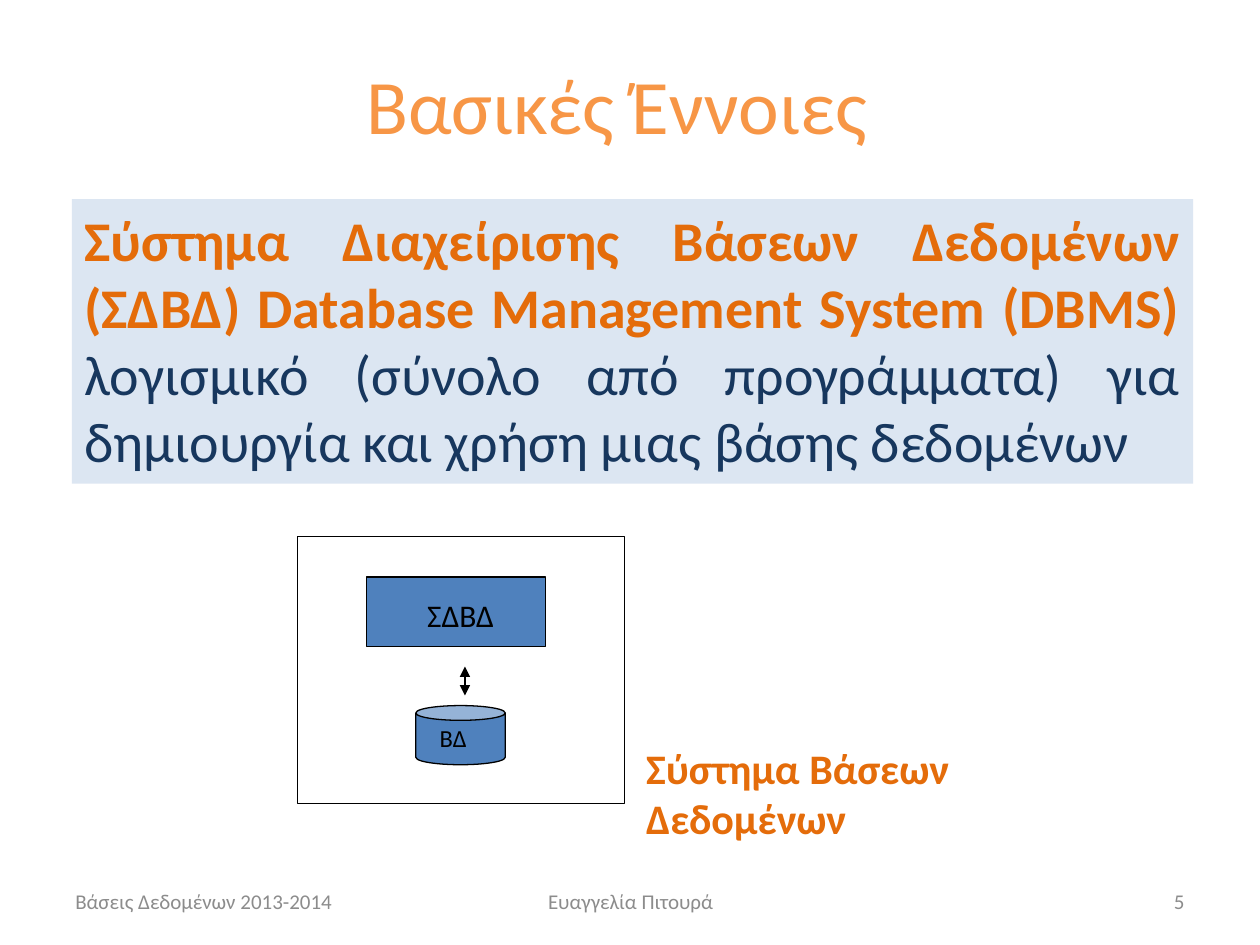
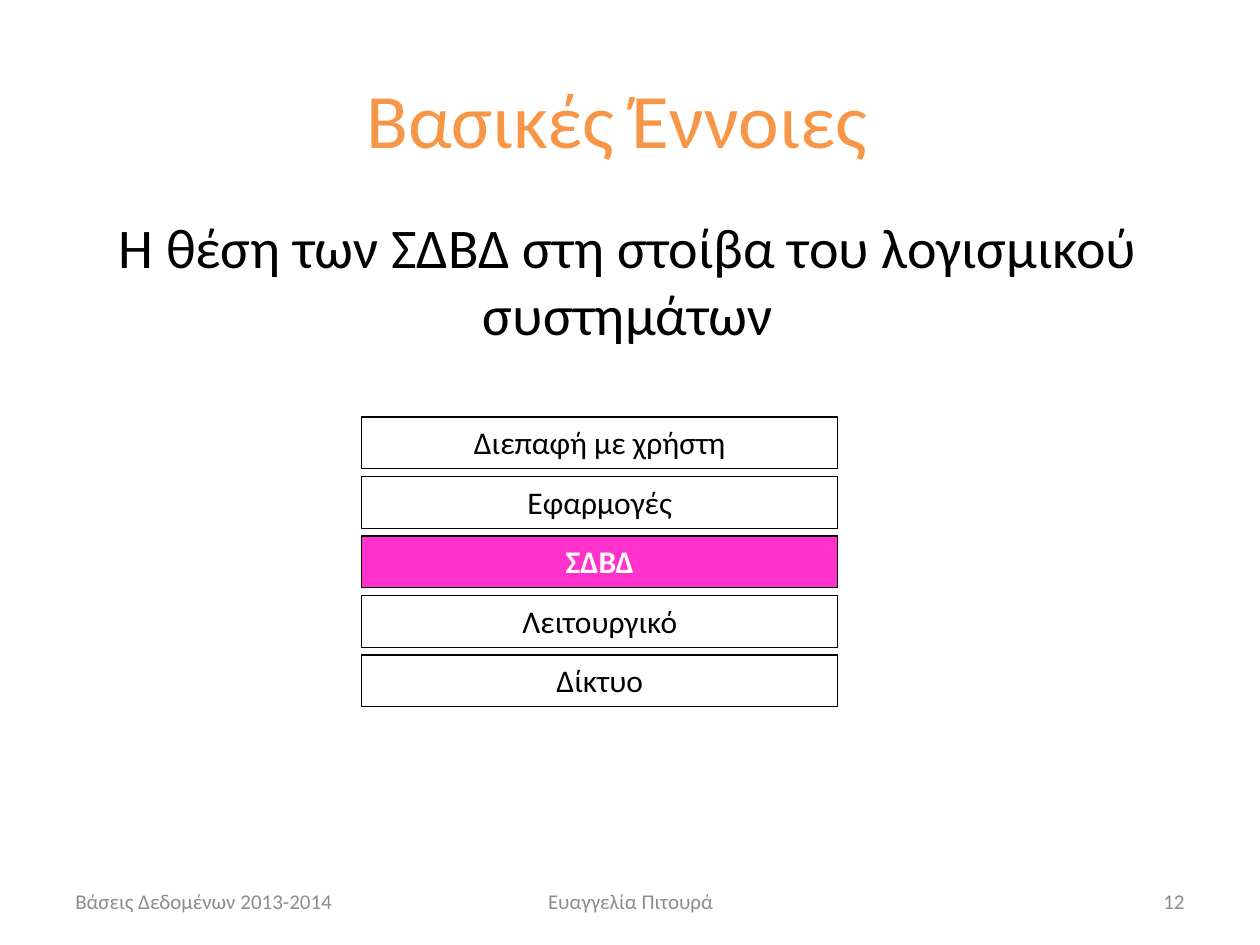
from lxml import etree
from pptx import Presentation
from pptx.dml.color import RGBColor
from pptx.enum import shapes, text
from pptx.oxml.ns import qn
from pptx.util import Inches, Pt

COLORS = {"title": "F79646", "accent": "E46C0A", "navy": "17375E", "pale": "DCE6F2",
          "blue": "4F81BD", "pink": "FF33CC", "grey": "8C8C8C", "black": "000000",
          "white": "FFFFFF"}
FONT = "Calibri"
LEFT, CENTER, RIGHT, JUSTIFY = (text.PP_ALIGN.LEFT, text.PP_ALIGN.CENTER,
                                text.PP_ALIGN.RIGHT, text.PP_ALIGN.JUSTIFY)
TOP, MIDDLE = text.MSO_ANCHOR.TOP, text.MSO_ANCHOR.MIDDLE
RECT, CAN = shapes.MSO_SHAPE.RECTANGLE, shapes.MSO_SHAPE.CAN


def rgb(name):
    """Return the named colour."""
    return RGBColor.from_string(COLORS[name])


def write(sp, runs, size, align=LEFT, anchor=TOP):
    """Fill a shape with one paragraph of (text, colour, bold) runs."""
    tf = sp.text_frame
    for name, value in {"word_wrap": True, "vertical_anchor": anchor}.items():
        setattr(tf, name, value)
    p = tf.paragraphs[0]
    p.alignment = align
    for words, color, bold in runs:
        r = p.add_run()
        r.text = words
        for name, value in {"name": FONT, "size": Pt(size), "bold": bold}.items():
            setattr(r.font, name, value)
        r.font.color.rgb = rgb(color)


def label(s, box, words, size, color="black", bold=False, align=LEFT, anchor=TOP):
    """Add a text box with a single run."""
    sp = s.shapes.add_textbox(*map(Inches, box))
    write(sp, [(words, color, bold)], size, align, anchor)
    return sp


def block(s, box, kind=RECT, fill=None, line="black"):
    """Add a flat preset shape with optional fill and outline."""
    sp = s.shapes.add_shape(kind, *map(Inches, box))
    sp.shadow.inherit = False
    if fill:
        sp.fill.solid()
        sp.fill.fore_color.rgb = rgb(fill)
    else:
        sp.fill.background()
    if line:
        sp.line.color.rgb = rgb(line)
        sp.line.width = Pt(0.75)
    else:
        sp.line.fill.background()
    return sp


def double_arrow(s, x, top, bottom):
    """Draw a vertical line with an arrowhead at each end."""
    sp = s.shapes.add_connector(shapes.MSO_CONNECTOR.STRAIGHT,
                                *map(Inches, (x, top, x, bottom)))
    sp.line.color.rgb = rgb("black")
    sp.line.width = Pt(0.75)
    ln = sp.line._get_or_add_ln()
    for end in ("a:headEnd", "a:tailEnd"):
        etree.SubElement(ln, qn(end), type="triangle")
    etree.SubElement(sp._element.spPr, qn("a:effectLst"))


def base_slide(prs, number, title_top):
    """Add a blank slide with the common title and footer."""
    s = prs.slides.add_slide(prs.slide_layouts[6])
    for left, width, words, align in ((0.5, 2.33, "Βάσεις Δεδομένων 2013-2014", LEFT),
                                      (3.42, 3.17, "Ευαγγελία Πιτουρά", CENTER),
                                      (7.17, 2.33, str(number), RIGHT)):
        label(s, (left, 6.95, width, 0.4), words, 12, "grey", align=align, anchor=MIDDLE)
    label(s, (0.4, title_top, 9, 1.25), "Βασικές Έννοιες", 44, "title",
          align=CENTER, anchor=MIDDLE)
    return s


def definition(s, box):
    """Draw the shaded definition panel."""
    write(block(s, box, fill="pale", line=None),
          [("Σύστημα Διαχείρισης Βάσεων Δεδομένων (ΣΔΒΔ) Database Management System (DBMS) ",
            "accent", True),
           ("λογισμικό (σύνολο από προγράμματα) για δημιουργία και χρήση μιας βάσης δεδομένων",
            "navy", False)], 32, JUSTIFY)


def database_system(s, box):
    """Draw the framed DBMS and database with the system caption."""
    x, y, w, h = box
    block(s, (x + 0.94, y + 1.34, 0.71, 0.47), CAN, "blue")
    block(s, (x + 0.55, y + 0.32, 1.42, 0.55), fill="blue")
    block(s, box)
    database = label(s, (x + 0.94, y + 1.43, 0.63, 0.34), "ΒΔ", 14)
    database.text_frame.margin_left = Inches(0.19)
    label(s, (x + 0.74, y + 0.42, 1.11, 0.4), "ΣΔΒΔ", 18, align=CENTER)
    label(s, (x + w + 0.07, y + h - 0.54, 3.23, 0.91), "Σύστημα Βάσεων Δεδομένων",
          24, "accent", True)
    double_arrow(s, x + 1.33, y + 1.03, y + 1.26)


def software_stack(s, box, layers, highlight, gap=0.06):
    """Draw the software layers at equal steps, one highlighted."""
    x, y, w, h = box
    row = (h - gap * (len(layers) - 1)) / len(layers)
    for i, layer in enumerate(layers):
        chosen = layer == highlight
        sp = block(s, (x, y + i * (row + gap), w, row), fill="pink" if chosen else None)
        write(sp, [(layer, "white" if chosen else "black", chosen)], 18, CENTER)


def main():
    """Build and save both slides."""
    prs = Presentation()
    prs.slide_width, prs.slide_height = Inches(10), Inches(7.5)

    s = base_slide(prs, 5, 0.2)
    definition(s, (0.57, 1.58, 8.9, 2.26))
    database_system(s, (2.36, 4.26, 2.6, 2.12))

    s = base_slide(prs, 12, 0.31)
    label(s, (0.4, 1.97, 9.17, 0.5), "Η θέση των ΣΔΒΔ στη στοίβα του λογισμικού συστημάτων",
          32, align=CENTER, anchor=MIDDLE)
    software_stack(s, (2.87, 3.31, 3.78, 2.3),
                   ("Διεπαφή με χρήστη", "Εφαρμογές", "ΣΔΒΔ", "Λειτουργικό", "Δίκτυο"),
                   highlight="ΣΔΒΔ")
    prs.save("out.pptx")


if __name__ == "__main__":
    main()
